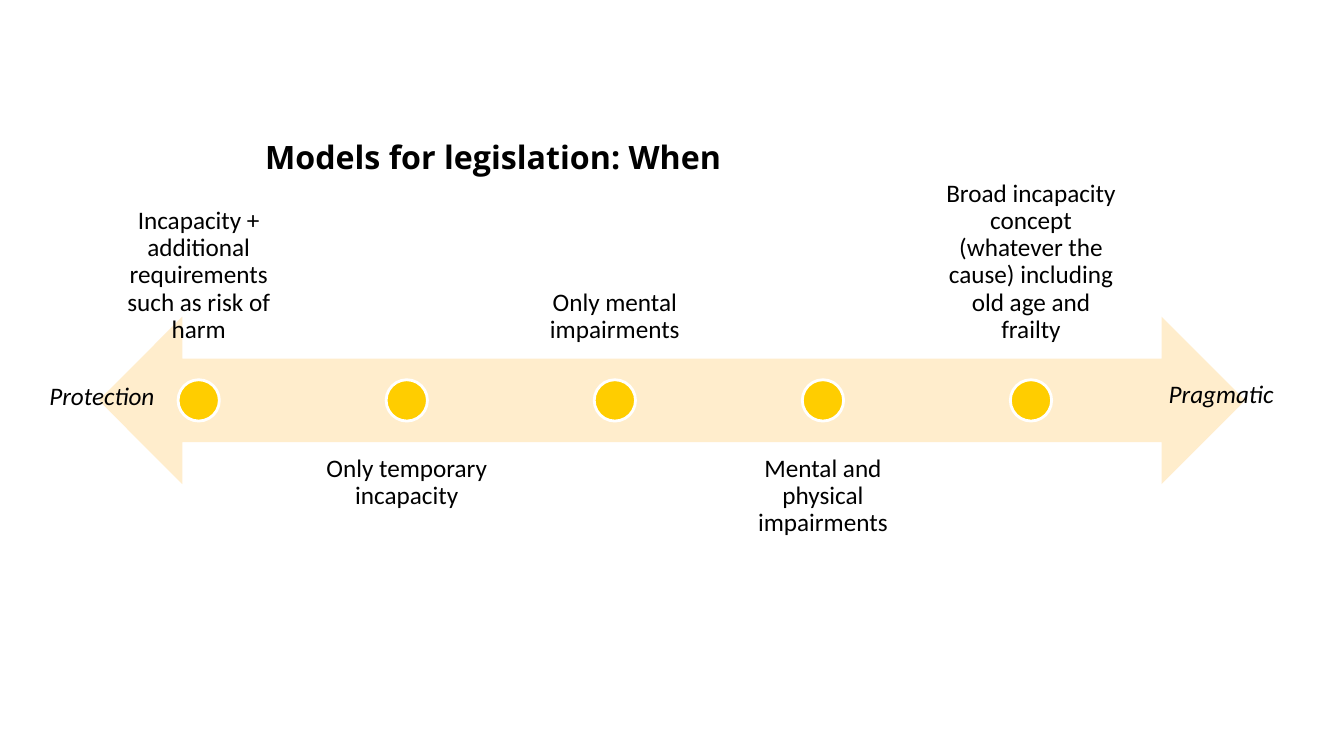
from dataclasses import dataclass, field
from pptx import Presentation
from pptx.dml.color import RGBColor
from pptx.enum.shapes import MSO_SHAPE
from pptx.enum.text import MSO_ANCHOR, PP_ALIGN
from pptx.util import Pt

COLORS = {"text": "000000", "arrow": "FFEDCC", "dot": "FFCD00", "ring": "FFFFFF"}
BODY = {"name": "Calibri", "size": Pt(18)}
ITALIC = BODY | {"italic": True}
TITLE = {"name": "Open Sans", "size": Pt(23), "bold": True}
CENTRED = {"alignment": PP_ALIGN.CENTER, "line_spacing": 0.9}

FIRST, STEP, AXIS = 142, 148.7, 286  # first stop, gap between stops, arrow middle
DOT, WIDE, HIGH = 29.5, 142, 119.5
ABOVE, BELOW = 136, 315.5


@dataclass
class Label:
    text: str
    left: float
    top: float
    width: float
    height: float
    font: dict
    inset: float = 0
    anchor: MSO_ANCHOR = MSO_ANCHOR.TOP
    para: dict = field(default_factory=dict)


def rgb(name: str) -> RGBColor:
    return RGBColor.from_string(COLORS[name])


def apply(target, values: dict) -> None:
    for key, value in values.items():
        setattr(target, key, value)


def add_label(slide, item: Label) -> None:
    box = slide.shapes.add_textbox(
        Pt(item.left), Pt(item.top), Pt(item.width), Pt(item.height))
    frame = box.text_frame
    sides = ("left", "top", "right", "bottom")
    apply(frame, {f"margin_{side}": Pt(item.inset) for side in sides})
    apply(frame, {"word_wrap": True, "vertical_anchor": item.anchor})
    para = frame.paragraphs[0]
    apply(para, item.para)
    run = para.add_run()
    run.text = item.text
    apply(run.font, item.font)
    run.font.color.rgb = rgb("text")


def add_solid(slide, kind: MSO_SHAPE, mid: float, width: float, height: float,
              fill: str, line: str = ""):
    """Draw a filled shape centred on the axis at x = mid."""
    shape = slide.shapes.add_shape(
        kind, Pt(mid - width / 2), Pt(AXIS - height / 2), Pt(width), Pt(height))
    shape.shadow.inherit = False
    shape.fill.solid()
    shape.fill.fore_color.rgb = rgb(fill)
    if line:
        shape.line.color.rgb = rgb(line)
        shape.line.width = Pt(2)
    else:
        shape.line.fill.background()


def main() -> None:
    deck = Presentation()
    apply(deck, {"slide_width": Pt(960.5), "slide_height": Pt(540)})
    slide = deck.slides.add_slide(deck.slide_layouts[6])

    add_label(slide, Label("Models for legislation: When",
                           185.8, 94.3, 588, 98.6, TITLE, inset=3.6))
    add_solid(slide, MSO_SHAPE.LEFT_RIGHT_ARROW, 480.2, 819.4, 119.5, "arrow")

    stops = (
        "Incapacity + additional requirements such as risk of harm",
        "Only temporary incapacity",
        "Only mental impairments",
        "Mental and physical impairments",
        "Broad incapacity concept (whatever the cause) including old age and frailty",
    )
    for i, text in enumerate(stops):
        mid = FIRST + i * STEP
        top, anchor = ((BELOW, MSO_ANCHOR.TOP) if i % 2
                       else (ABOVE, MSO_ANCHOR.BOTTOM))
        add_label(slide, Label(text, mid - WIDE / 2, top, WIDE, HIGH,
                               BODY, 10, anchor, CENTRED))
        add_solid(slide, MSO_SHAPE.OVAL, mid, DOT, DOT, "dot", "ring")

    for text, left, top in (("Pragmatic", 835.2, 270), ("Protection", 35.3, 271.4)):
        add_label(slide, Label(text, left, top, 125.3, 21.6, ITALIC))

    deck.save("out.pptx")


if __name__ == "__main__":
    main()
